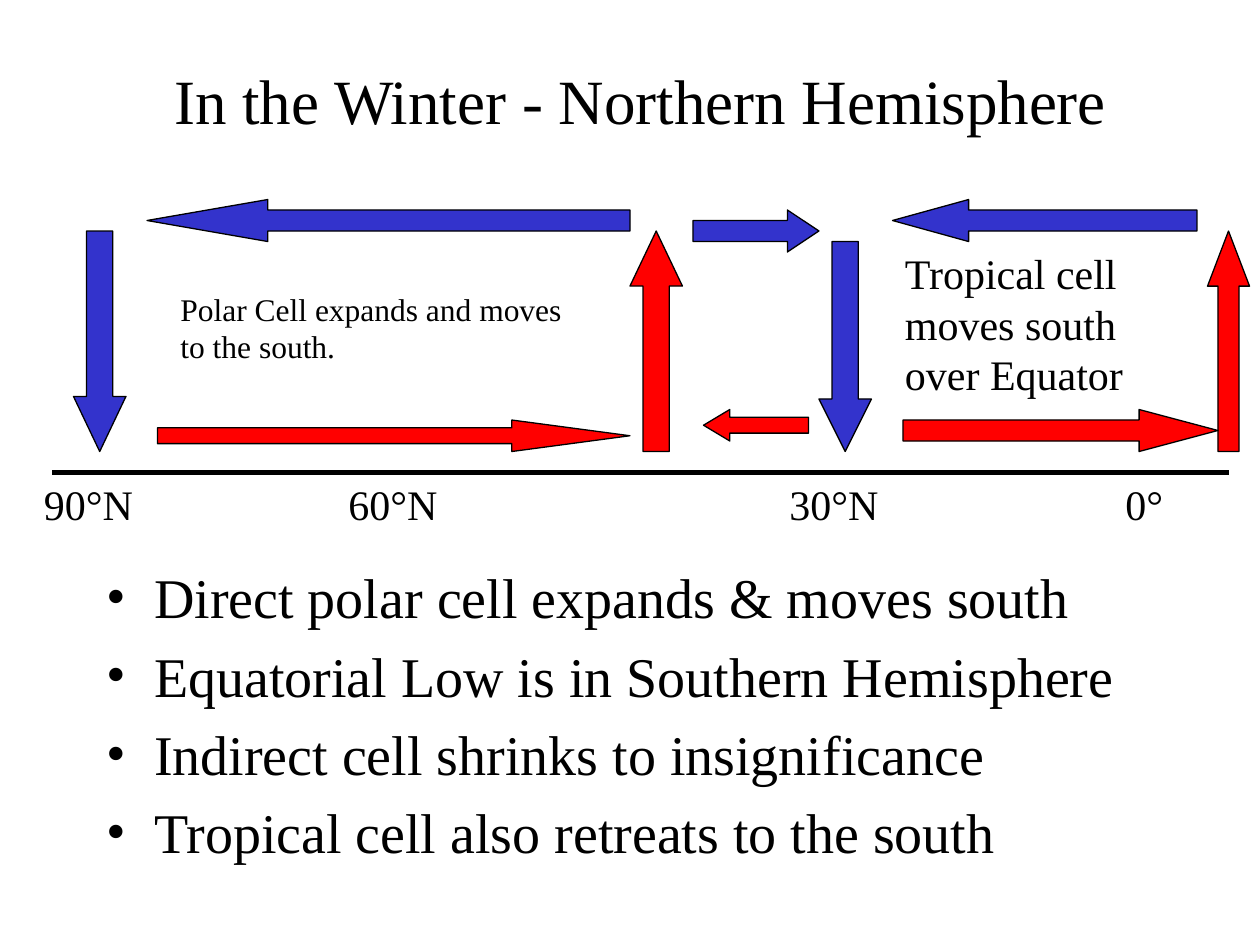
"""Build a slide on winter atmospheric circulation in the Northern Hemisphere."""
import pptx
import pptx.dml.color
import pptx.enum.shapes
import pptx.enum.text
import pptx.oxml.ns
import pptx.util
from lxml import etree

EMU_PER_PX = 7620
FONT = "Times New Roman"
COLORS = {"ink": "000000", "cold": "3333CC", "warm": "FF0000"}
ARROW = pptx.enum.shapes.MSO_SHAPE
ALIGN = pptx.enum.text.PP_ALIGN
ANCHOR = pptx.enum.text.MSO_ANCHOR

TITLE = ("In the Winter - Northern Hemisphere", (100, 20, 1020, 150))
BULLETS = (
    [
        "Direct polar cell expands & moves south",
        "Equatorial Low is in Southern Hemisphere",
        "Indirect cell shrinks to insignificance",
        "Tropical cell also retreats to the south",
    ],
    (90, 530, 1020, 330),
)
GROUND = (50, 450, 1170, 450)
LATITUDES = [("0°", 1060, 60), ("90°N", 30, 109), ("60°N", 320, 109), ("30°N", 740, 109)]
WINDS = [
    (ARROW.DOWN_ARROW, "cold", (70, 220, 50, 210)),
    (ARROW.DOWN_ARROW, "cold", (780, 230, 50, 200)),
    (ARROW.UP_ARROW, "warm", (1150, 220, 40, 210)),
    (ARROW.UP_ARROW, "warm", (600, 220, 50, 210)),
    (ARROW.LEFT_ARROW, "cold", (850, 190, 290, 40)),
    (ARROW.RIGHT_ARROW, "cold", (660, 200, 120, 40)),
    (ARROW.LEFT_ARROW, "cold", (140, 190, 460, 40)),
    (ARROW.RIGHT_ARROW, "warm", (150, 400, 450, 30)),
    (ARROW.LEFT_ARROW, "warm", (670, 390, 100, 30)),
    (ARROW.RIGHT_ARROW, "warm", (860, 390, 300, 40)),
]
CELL_NOTES = [
    ("Tropical cell\nmoves south\nover Equator", 24, (850, 230, 232, 156)),
    ("Polar Cell expands and moves\nto the south.", 18, (160, 270, 388, 84)),
]


def px(*lengths):
    return [pptx.util.Emu(length * EMU_PER_PX) for length in lengths]


def color(name):
    return pptx.dml.color.RGBColor.from_string(COLORS[name])


def add_text(slide, text, size, box, wrap=False, align=ALIGN.LEFT, anchor=ANCHOR.TOP):
    frame = slide.shapes.add_textbox(*px(*box)).text_frame
    frame.text = text
    frame.word_wrap = wrap
    frame.vertical_anchor = anchor
    if not wrap:
        frame.auto_size = pptx.enum.text.MSO_AUTO_SIZE.SHAPE_TO_FIT_TEXT
    for paragraph in frame.paragraphs:
        paragraph.alignment = align
        for run in paragraph.runs:
            run.font.name = FONT
            run.font.size = pptx.util.Pt(size)
            run.font.color.rgb = color("ink")
    return frame


def add_bullet(paragraph, indent):
    qn = pptx.oxml.ns.qn
    props = paragraph._p.get_or_add_pPr()
    props.set("marL", str(indent))
    props.set("indent", str(-indent))
    space = etree.SubElement(props, qn("a:spcBef"))
    etree.SubElement(space, qn("a:spcPct")).set("val", "20000")
    etree.SubElement(props, qn("a:buFont")).set("typeface", FONT)
    etree.SubElement(props, qn("a:buChar")).set("char", "•")


def add_ground(slide):
    straight = pptx.enum.shapes.MSO_CONNECTOR.STRAIGHT
    ground = slide.shapes.add_connector(straight, *px(*GROUND))
    ground.line.color.rgb = color("ink")
    ground.line.width = pptx.util.Pt(3)
    etree.SubElement(ground._element.spPr, pptx.oxml.ns.qn("a:effectLst"))


def add_wind(slide, direction, air, box):
    wind = slide.shapes.add_shape(direction, *px(*box))
    wind.shadow.inherit = False
    wind.fill.solid()
    wind.fill.fore_color.rgb = color(air)
    wind.line.color.rgb = color("ink")
    wind.line.width = pptx.util.Pt(0.75)
    thickness, length = sorted(box[2:])
    wind.adjustments[0] = 0.5
    wind.adjustments[1] = length / 4 / thickness


def main():
    deck = pptx.Presentation()
    deck.slide_width, deck.slide_height = px(1200, 900)
    slide = deck.slides.add_slide(deck.slide_layouts[6])

    title, title_box = TITLE
    add_text(slide, title, 36, title_box, True, ALIGN.CENTER, ANCHOR.MIDDLE)
    add_ground(slide)
    for latitude, left, width in LATITUDES:
        add_text(slide, latitude, 24, (left, 450, width, 60))
    for direction, air, box in WINDS:
        add_wind(slide, direction, air, box)
    for note, size, box in CELL_NOTES:
        add_text(slide, note, size, box)

    points, points_box = BULLETS
    summary = add_text(slide, "\n".join(points), 32, points_box, True)
    for paragraph in summary.paragraphs:
        add_bullet(paragraph, px(45)[0])

    deck.save("out.pptx")


if __name__ == "__main__":
    main()
